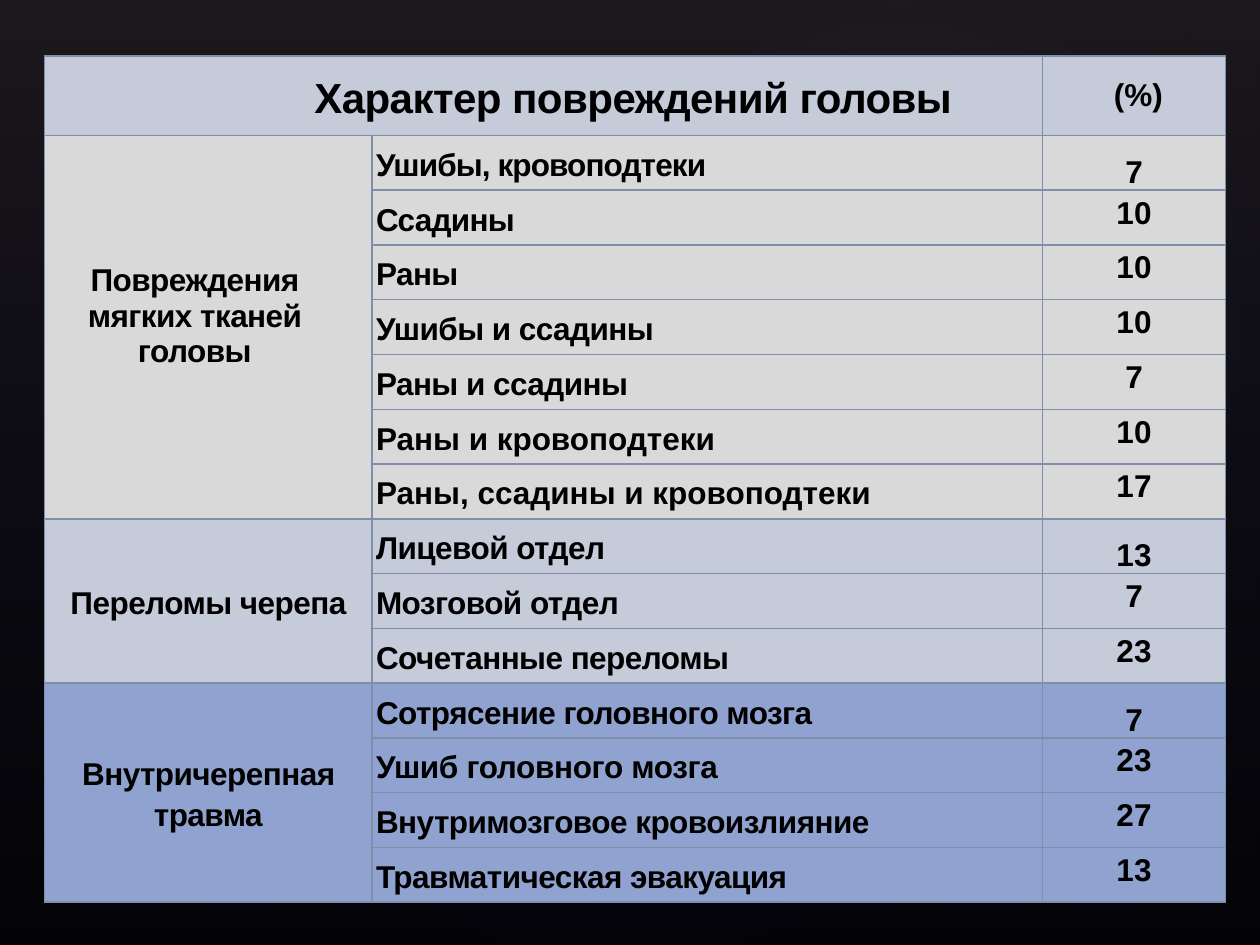
from lxml.etree import SubElement
from pptx import Presentation
from pptx.dml.color import RGBColor
from pptx.enum.shapes import MSO_SHAPE
from pptx.enum.text import MSO_ANCHOR, PP_ALIGN
from pptx.oxml.ns import qn
from pptx.util import Cm, Pt

BLACK = RGBColor(0x00, 0x00, 0x00)
PLUM = RGBColor(0x50, 0x46, 0x52)
NAVY = RGBColor(0x24, 0x28, 0x52)
MAUVE = RGBColor(0xC4, 0xBC, 0xC6)
PALE_BLUE = RGBColor(0xC5, 0xCB, 0xD9)
GREY = RGBColor(0xD9, 0xD9, 0xD9)
BLUE = RGBColor(0x90, 0xA2, 0xCF)
BORDER = RGBColor(0x7F, 0x8F, 0xA9)

SLIDE_WIDTH, SLIDE_HEIGHT = Cm(25.4), Cm(19.05)
COLUMN_WIDTHS = Cm(6.6), Cm(13.52), Cm(3.68)
HEADER_HEIGHT = Cm(1.6)
BODY_HEIGHT = Cm(15.46)
TIGHT = -0.3  # usual letter spacing, in points

# Left, top, width and height in cm, rotation, opacity of the centre in percent
GLOWS = [
    (3.81, 2.9, 20.12, 15.85, 328.7, 7),
    (-0.76, 3.25, 15.39, 12.45, 294.3, 8),
    (9.09, 0.33, 18.01, 13.21, 328.7, 8),
]

# Group name, fill, label format, and its injuries: name, percent, letter spacing
GROUPS = [
    ("Повреждения мягких тканей головы", GREY,
     {"line_spacing": 1.0, "margin_bottom": Pt(12.5), "margin_right": Cm(0.63)}, [
         ("Ушибы, кровоподтеки", 7, -0.5),
         ("Ссадины", 10, -0.4),
         ("Раны", 10, TIGHT),
         ("Ушибы и ссадины", 10, TIGHT),
         ("Раны и ссадины", 7, TIGHT),
         ("Раны и кровоподтеки", 10, TIGHT),
         ("Раны, ссадины и кровоподтеки", 17, TIGHT),
     ]),
    ("Переломы черепа", PALE_BLUE, {}, [
        ("Лицевой отдел", 13, TIGHT),
        ("Мозговой отдел", 7, TIGHT),
        ("Сочетанные переломы", 23, TIGHT),
    ]),
    ("Внутричерепная травма", BLUE, {}, [
        ("Сотрясение головного мозга", 7, TIGHT),
        ("Ушиб головного мозга", 23, -0.2),
        ("Внутримозговое кровоизлияние", 27, TIGHT),
        ("Травматическая эвакуация", 13, TIGHT),
    ]),
]
# These two injuries are set without tightening
UNTIGHTENED = {"Раны и кровоподтеки", "Раны, ссадины и кровоподтеки"}


def set_attributes(target, values):
    for name, value in values.items():
        setattr(target, name, value)


def add_veil(slide, outline, box, stops):
    """Add a borderless shape with a translucent gradient.

    Each stop is a position from 0 to 1, a colour and an opacity in percent.
    """
    veil = slide.shapes.add_shape(outline, *box)
    veil.shadow.inherit = False
    veil.line.fill.background()
    veil.fill.gradient()
    veil.fill.gradient_angle = 270
    for stop, (position, color, opacity) in zip(veil.fill.gradient_stops, stops):
        stop.position = position
        stop.color.rgb = color
    colors = veil._element.spPr.findall(f".//{qn('a:gs')}/{qn('a:srgbClr')}")
    for color_element, (*_, opacity) in zip(colors, stops):
        SubElement(color_element, qn("a:alpha"), val=str(opacity * 1000))
    return veil


def make_radial(veil):
    gradient = veil._element.spPr.find(qn("a:gradFill"))
    gradient.remove(gradient.find(qn("a:lin")))
    circle = SubElement(gradient, qn("a:path"), path="circle")
    SubElement(circle, qn("a:fillToRect"), l="50000", t="50000",
               r="50000", b="50000")


def paint_background(slide):
    slide.background.fill.solid()
    slide.background.fill.fore_color.rgb = BLACK
    add_veil(slide, MSO_SHAPE.RECTANGLE, (0, 0, SLIDE_WIDTH, SLIDE_HEIGHT),
             [(0, PLUM, 36), (1, NAVY, 10)])
    for *box, rotation, opacity in GLOWS:
        glow = add_veil(slide, MSO_SHAPE.OVAL, map(Cm, box),
                        [(0, MAUVE, opacity), (0.58, NAVY, 0)])
        glow.rotation = rotation
        make_radial(glow)


def style_cell(cell, color):
    """Give a cell its four borders, then its fill."""
    properties = cell._tc.get_or_add_tcPr()
    for side in ("lnL", "lnR", "lnT", "lnB"):
        line = SubElement(properties, qn(f"a:{side}"), w=str(Pt(1)))
        solid = SubElement(line, qn("a:solidFill"))
        SubElement(solid, qn("a:srgbClr"), val=str(BORDER))
    cell.fill.solid()
    cell.fill.fore_color.rgb = color


def write_cell(cell, text, align=PP_ALIGN.CENTER, anchor=MSO_ANCHOR.MIDDLE,
               size=18, letter_spacing=0, line_spacing=1.15, indent=0,
               margin_bottom=0, margin_right=Cm(0.08)):
    set_attributes(cell, {
        "vertical_anchor": anchor,
        "margin_left": Cm(0.08), "margin_right": margin_right,
        "margin_top": 0, "margin_bottom": margin_bottom,
    })
    paragraph = cell.text_frame.paragraphs[0]
    set_attributes(paragraph, {"alignment": align, "line_spacing": line_spacing})
    if indent:
        paragraph._p.get_or_add_pPr().set("marL", str(indent))
    run = paragraph.add_run()
    run.text = text
    set_attributes(run.font, {"name": "Arial", "size": Pt(size), "bold": True})
    run.font.color.rgb = BLACK
    run._r.get_or_add_rPr().set("spc", str(round(letter_spacing * 100)))


def add_injury_table(slide):
    injury_count = sum(len(injuries) for *_, injuries in GROUPS)
    table = slide.shapes.add_table(
        injury_count + 1, len(COLUMN_WIDTHS), Cm(0.9), Cm(1.13),
        sum(COLUMN_WIDTHS), HEADER_HEIGHT + BODY_HEIGHT).table
    set_attributes(table, {"first_row": False, "horz_banding": False})
    for column, width in zip(table.columns, COLUMN_WIDTHS):
        column.width = width
    for row in table.rows:
        row.height = BODY_HEIGHT // injury_count
    table.rows[0].height = HEADER_HEIGHT
    return table


def fill_header(table):
    for cell in table.rows[0].cells:
        style_cell(cell, PALE_BLUE)
    table.cell(0, 0).merge(table.cell(0, 1))
    write_cell(table.cell(0, 0), "Характер повреждений головы", size=24,
               letter_spacing=TIGHT, indent=Cm(3.6))
    write_cell(table.cell(0, 2), " (%)", line_spacing=1.0)


def fill_group(table, first_row, label, color, label_format, injuries):
    for row, (injury, percent, spacing) in enumerate(injuries, first_row):
        for cell in table.rows[row].cells:
            style_cell(cell, color)
        write_cell(table.cell(row, 1), injury, PP_ALIGN.LEFT,
                   letter_spacing=0 if injury in UNTIGHTENED else spacing)
        write_cell(table.cell(row, 2), str(percent), anchor=(
            MSO_ANCHOR.BOTTOM if row == first_row else MSO_ANCHOR.TOP))
    group_cell = table.cell(first_row, 0)
    group_cell.merge(table.cell(first_row + len(injuries) - 1, 0))
    write_cell(group_cell, label, letter_spacing=TIGHT, **label_format)


def main():
    presentation = Presentation()
    set_attributes(presentation, {"slide_width": SLIDE_WIDTH,
                                  "slide_height": SLIDE_HEIGHT})
    slide = presentation.slides.add_slide(presentation.slide_layouts[6])
    paint_background(slide)
    table = add_injury_table(slide)
    fill_header(table)
    first_row = 1
    for label, color, label_format, injuries in GROUPS:
        fill_group(table, first_row, label, color, label_format, injuries)
        first_row += len(injuries)
    presentation.save("out.pptx")


if __name__ == "__main__":
    main()
